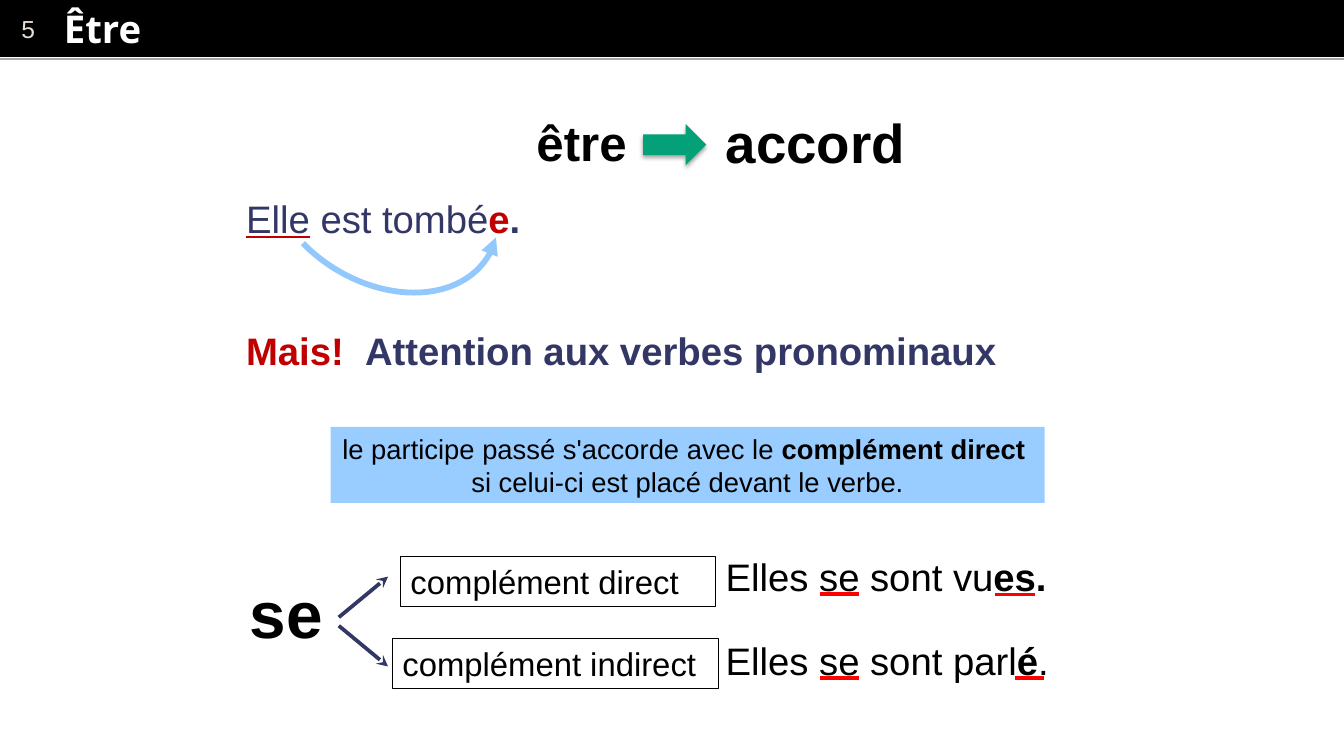
from lxml.etree import SubElement
from pptx import Presentation
from pptx.dml.color import RGBColor
from pptx.enum.shapes import MSO_CONNECTOR, MSO_SHAPE
from pptx.enum.text import MSO_ANCHOR, PP_ALIGN
from pptx.oxml import parse_xml
from pptx.oxml.ns import nsdecls, qn
from pptx.util import Cm, Pt

COLOURS = {
    "black": "000000", "white": "FFFFFF", "grey": "A6A6A6", "sand": "E7DED1",
    "navy": "333766", "crimson": "C00000", "red": "FF0000", "green": "04A078",
    "sky": "99CCFF", "curve": "93C8FC",
}
WIDTH, HEIGHT = 34.67, 19.51
PAGE_NUMBER = [[("5", 18, "sand", "")]]
TITLE = [[("Être", 28, "white", "b")]]
EXAMPLES = [
    [("Elle", 28, "navy", "u"), (" est tombé", 28, "navy", ""),
     ("e", 28, "crimson", "b"), (".", 28, "navy", "b")],
    [("Mais!\t", 28, "crimson", "b"),
     ("Attention aux verbes pronominaux", 28, "navy", "b")],
]
RULE = [
    [("le participe passé s'accorde avec le ", 20, "black", ""),
     ("complément direct ", 20, "black", "b")],
    [("si celui-ci est placé devant le verbe.", 20, "black", "")],
]
KEYWORDS = [
    ((13.59, 2.77, 3.1, 1.8), "être", 36, MSO_ANCHOR.TOP),
    ((18.47, 2.69, 5.18, 1.96), "accord", 40, MSO_ANCHOR.TOP),
    ((6.2, 14.66, 2.64, 2.29), "se", 48, MSO_ANCHOR.MIDDLE),
]
COMPLEMENTS = [
    {"label": "complément direct", "box": (10.34, 14.35, 8.13, 1.3),
     "sentence": [("Elles se sont vu", ""), ("es.", "b")], "top": 14.15,
     "branch": (8.74, 15.93, 10.01, 14.88),
     "underlines": [(21.16, 22.17, 15.32), (25.68, 26.7, 15.34)]},
    {"label": "complément indirect", "box": (10.13, 16.48, 8.41, 1.3),
     "sentence": [("Elles se sont parl", ""), ("é", "b"), (".", "")], "top": 16.31,
     "branch": (8.74, 16.15, 10.01, 17.2),
     "underlines": [(21.16, 22.17, 17.5), (26.19, 26.92, 17.5)]},
]


def colour(name):
    """Return the named colour."""
    return RGBColor.from_string(COLOURS[name])


def write(shape, lines, anchor=MSO_ANCHOR.MIDDLE, align=PP_ALIGN.LEFT,
          font="Arial", inset=0.25):
    """Fill a shape with lines made of (text, size, colour, style) runs."""
    frame = shape.text_frame
    frame.word_wrap = True
    frame.vertical_anchor = anchor
    frame.margin_left = frame.margin_right = Cm(inset)
    frame.margin_top = frame.margin_bottom = Cm(min(inset, 0.13))
    for index, line in enumerate(lines):
        paragraph = frame.add_paragraph() if index else frame.paragraphs[0]
        paragraph.alignment = align
        for text, size, tint, style in line:
            run = paragraph.add_run()
            run.text = text
            run.font.name, run.font.size = font, Pt(size)
            run.font.bold = "b" in style
            run.font.underline = "u" in style
            run.font.color.rgb = colour(tint)
    return frame


def add_text(slide, place, lines, **options):
    """Add a text box."""
    return write(slide.shapes.add_textbox(*map(Cm, place)), lines, **options)


def add_block(slide, kind, place, fill=None, line=None, width=0.75):
    """Add a preset shape with optional fill and line."""
    block = slide.shapes.add_shape(kind, *map(Cm, place))
    block.shadow.inherit = False
    if fill:
        block.fill.solid()
        block.fill.fore_color.rgb = colour(fill)
    else:
        block.fill.background()
    if line:
        block.line.color.rgb = colour(line)
        block.line.width = Pt(width)
    else:
        block.line.fill.background()
    return block


def add_line(slide, ends, tint, width):
    """Add a straight line without shadow."""
    line = slide.shapes.add_connector(MSO_CONNECTOR.STRAIGHT, *map(Cm, ends))
    line.line.color.rgb = colour(tint)
    line.line.width = Pt(width)
    SubElement(line._element.spPr, qn("a:effectLst"))
    return line


def add_arrowhead(line, end, head):
    """Put an arrowhead on one end of a line."""
    SubElement(line.line._get_or_add_ln(), qn(f"a:{end}"), type=head)


def add_header(slide):
    """Draw the black band with page number and title."""
    band = add_block(slide, MSO_SHAPE.RECTANGLE, (0, 0, WIDTH, 1.47), "black", "black")
    write(band, PAGE_NUMBER, inset=0.55)
    add_line(slide, (0, 1.52, WIDTH, 1.52), "grey", 2)
    add_text(slide, (1.55, 0.03, 32.64, 1.42), TITLE, font="Open Sans", inset=0.1)


def add_examples(slide):
    """Write the example and the warning, with the agreement arc."""
    frame = add_text(slide, (6.1, 4.9, 22.86, 4.6), EXAMPLES, anchor=MSO_ANCHOR.TOP)
    subject = frame.paragraphs[0].runs[0].font._element
    underline = parse_xml(
        f'<a:uFill {nsdecls("a")}><a:solidFill>'
        f'<a:srgbClr val="{COLOURS["crimson"]}"/></a:solidFill></a:uFill>')
    subject.find(qn("a:latin")).addprevious(underline)
    warning = frame.paragraphs[1]
    warning.space_before = Pt(63)
    stops = SubElement(warning._p.get_or_add_pPr(), qn("a:tabLst"))
    SubElement(stops, qn("a:tab"), pos=str(Cm(3.07)), algn="l")
    arc = add_block(slide, MSO_SHAPE.ARC, (7.47, 1.65, 4.75, 6.48), line="curve", width=4.25)
    arc.rotation = 123
    arc.adjustments[0], arc.adjustments[1] = 155.85, 13.61
    add_arrowhead(arc, "headEnd", "triangle")


def add_agreement(slide):
    """Draw the keywords, the green arrow and the rule."""
    for place, word, size, anchor in KEYWORDS:
        add_text(slide, place, [[(word, size, "black", "b")]], anchor=anchor)
    arrow = add_block(slide, MSO_SHAPE.RIGHT_ARROW, (16.59, 3.2, 1.63, 1.07), "green")
    effects = arrow._element.spPr.find(qn("a:effectLst"))
    shadow = SubElement(effects, qn("a:outerShdw"), blurRad=str(Pt(3.1)),
                        dist=str(Pt(1.8)), dir="5400000", rotWithShape="0")
    tint = SubElement(shadow, qn("a:srgbClr"), val=COLOURS["black"])
    SubElement(tint, qn("a:alpha"), val="35000")
    rule = add_block(slide, MSO_SHAPE.RECTANGLE, (8.53, 11.02, 18.42, 1.96), "sky")
    write(rule, RULE, align=PP_ALIGN.CENTER)


def add_complement(slide, complement):
    """Draw one branch with its label, sentence and underlines."""
    branch = add_line(slide, complement["branch"], "navy", 2.75)
    add_arrowhead(branch, "tailEnd", "stealth")
    label = add_block(slide, MSO_SHAPE.RECTANGLE, complement["box"], line="black")
    write(label, [[(complement["label"], 24, "black", "")]])
    sentence = [(text, 28, "black", style) for text, style in complement["sentence"]]
    add_text(slide, (18.47, complement["top"], 9.22, 1.45), [sentence])
    for start, end, level in complement["underlines"]:
        add_line(slide, (start, level, end, level), "red", 2.75)


def main():
    """Build the slide on the agreement of the participle with être."""
    deck = Presentation()
    deck.slide_width, deck.slide_height = Cm(WIDTH), Cm(HEIGHT)
    slide = deck.slides.add_slide(deck.slide_layouts[6])
    add_header(slide)
    add_examples(slide)
    add_agreement(slide)
    for complement in COMPLEMENTS:
        add_complement(slide, complement)
    deck.save("out.pptx")


if __name__ == "__main__":
    main()
